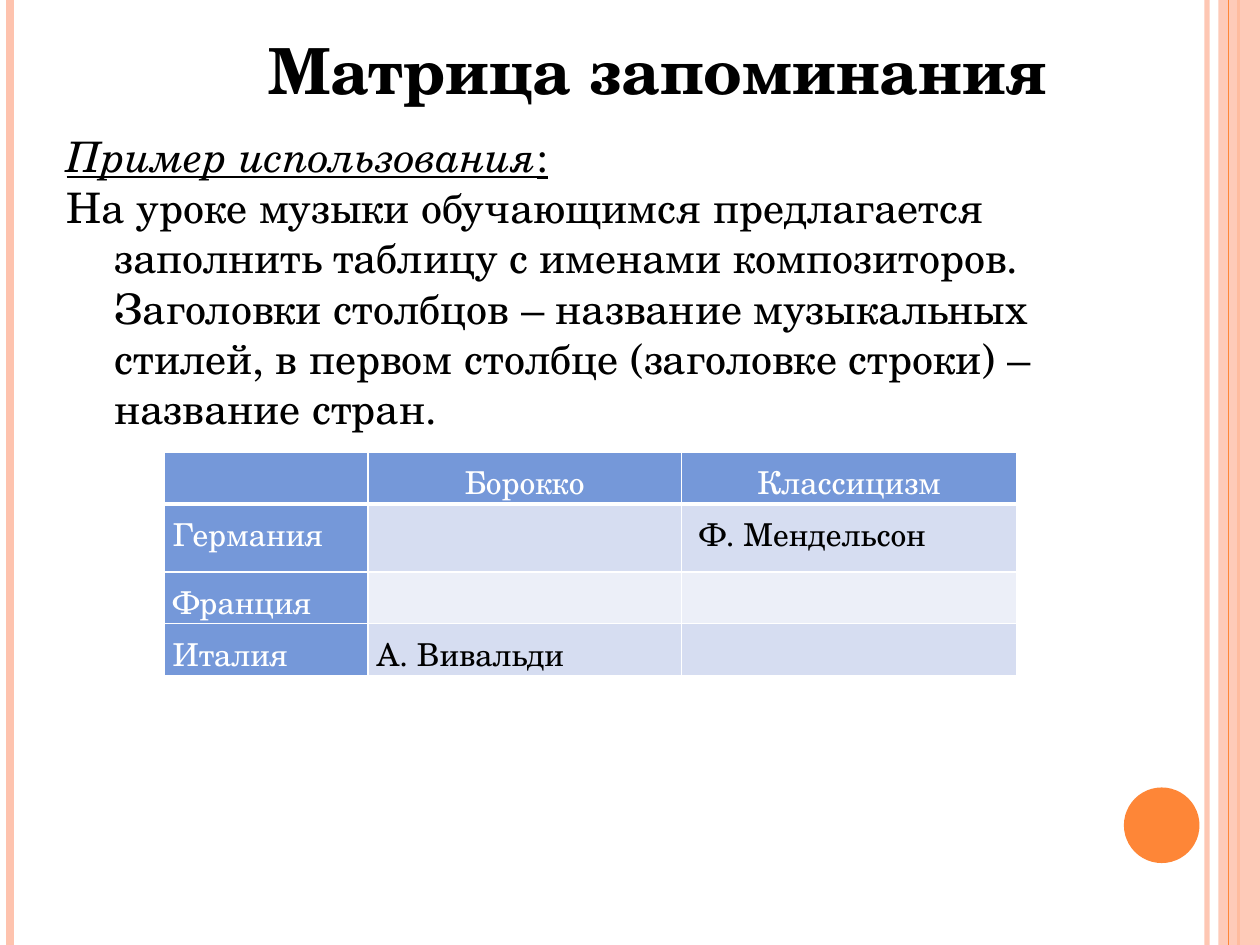
import pptx
import pptx.dml.color
import pptx.enum.shapes
import pptx.enum.text
import pptx.oxml.ns
import pptx.util
from lxml import etree

WIDTH, HEIGHT = 10, 7.5
FONT = "TeX Gyre Schola"
BLACK, WHITE = "000000", "FFFFFF"
PEACH, ORANGE = "FEC3AE", "FE8637"
HEADER_BLUE, BAND_DARK, BAND_LIGHT = "7598D9", "D6DDF1", "ECEFF8"

ALIGN = pptx.enum.text.PP_ALIGN
SHAPE = pptx.enum.shapes.MSO_SHAPE

COLUMN_WIDTHS = [1.62, 2.49, 2.66]
ROW_HEIGHTS = [0.41, 0.54, 0.41, 0.41]
COMPOSERS = [
    ["", "Борокко", "Классицизм"],
    ["Германия", "", " Ф. Мендельсон"],
    ["Франция", "", ""],
    ["Италия", "А. Вивальди", ""],
]


def inches(*values):
    return [pptx.util.Inches(value) for value in values]


def set_color(color_format, color, opacity=100):
    color_format.rgb = pptx.dml.color.RGBColor.from_string(color)
    if opacity < 100:
        element = color_format._xFill.find(".//" + pptx.oxml.ns.qn("a:srgbClr"))
        add_child(element, "a:alpha", val=opacity * 1000)


def set_fill(fill, color, opacity=100):
    fill.solid()
    set_color(fill.fore_color, color, opacity)


def add_child(parent, tag, **attributes):
    child = etree.SubElement(parent, pptx.oxml.ns.qn(tag))
    for name, value in attributes.items():
        child.set(name, str(value))
    return child


def format_run(run, size, color=BLACK, bold=False, italic=False, underline=False):
    font = run.font
    font.name, font.size = FONT, pptx.util.Pt(size)
    font.bold, font.italic, font.underline = bold, italic, underline
    set_color(font.color, color)


def add_vertical_line(slide, x, color, width, opacity=100):
    line = slide.shapes.add_connector(
        pptx.enum.shapes.MSO_CONNECTOR.STRAIGHT, *inches(x, 0, x, HEIGHT))
    line.line.width = pptx.util.Pt(width)
    set_fill(line.line.fill, color, opacity)
    add_child(line._element.spPr, "a:effectLst")


def add_plain_shape(slide, kind, box, color, opacity=100):
    shape = slide.shapes.add_shape(kind, *inches(*box))
    shape.shadow.inherit = False
    set_fill(shape.fill, color, opacity)
    shape.line.fill.background()


def add_text_box(slide, box):
    text_frame = slide.shapes.add_textbox(*inches(*box)).text_frame
    text_frame.word_wrap = True
    return text_frame


def add_frame(slide):
    add_vertical_line(slide, 9.58, PEACH, 3, opacity=93)
    add_vertical_line(slide, 0.08, PEACH, 4.5)
    add_vertical_line(slide, 9.83, ORANGE, 1.5)
    add_plain_shape(slide, SHAPE.RECTANGLE, (9.67, 0, 0.33, HEIGHT), PEACH, opacity=87)
    add_vertical_line(slide, 9.75, ORANGE, 0.75)
    add_plain_shape(slide, SHAPE.OVAL, (8.92, 6.25, 0.6, 0.6), ORANGE)


def add_example(slide):
    text_frame = add_text_box(slide, (0.43, 0.99, 7.95, 2.05))
    heading, description = text_frame.paragraphs[0], text_frame.add_paragraph()
    heading.text = "Пример использования"
    heading.add_run().text = ":"
    description.text = (
        "На уроке музыки обучающимся предлагается заполнить таблицу с именами "
        "композиторов. Заголовки столбцов – название музыкальных стилей, в первом "
        "столбце (заголовке строки) – название стран.")
    format_run(heading.runs[0], 24, italic=True, underline=True)
    format_run(heading.runs[1], 24, underline=True)
    format_run(description.runs[0], 24)
    # Hanging indent
    indent = pptx.util.Inches(0.38)
    for paragraph in text_frame.paragraphs:
        properties = paragraph._p.get_or_add_pPr()
        properties.set("marL", str(indent))
        properties.set("indent", str(-indent))


def set_borders(cell, bottom_width):
    properties = cell._tc.get_or_add_tcPr()
    widths = {"a:lnL": 1, "a:lnR": 1, "a:lnT": 1, "a:lnB": bottom_width}
    for tag, width in widths.items():
        border = add_child(properties, tag, w=pptx.util.Pt(width))
        add_child(add_child(border, "a:solidFill"), "a:srgbClr", val=WHITE)


def fill_cell(cell, text, row, column):
    is_header = row == 0 or column == 0
    set_borders(cell, bottom_width=3 if row == 0 else 1)
    band = BAND_DARK if row % 2 else BAND_LIGHT
    set_fill(cell.fill, HEADER_BLUE if is_header else band)
    cell.margin_left = cell.margin_right = pptx.util.Inches(0.07)
    cell.margin_top = cell.margin_bottom = 0
    paragraph = cell.text_frame.paragraphs[0]
    paragraph.text = text
    paragraph.alignment = ALIGN.CENTER if row == 0 else ALIGN.JUSTIFY
    paragraph.line_spacing = 1.15
    for run in paragraph.runs:
        format_run(run, 18, WHITE if is_header else BLACK)


def add_composer_table(slide):
    table = slide.shapes.add_table(
        len(ROW_HEIGHTS), len(COLUMN_WIDTHS),
        *inches(1.3, 3.59, sum(COLUMN_WIDTHS), sum(ROW_HEIGHTS))).table
    for column, width in zip(table.columns, inches(*COLUMN_WIDTHS)):
        column.width = width
    for row, height in zip(table.rows, inches(*ROW_HEIGHTS)):
        row.height = height
    for row, texts in enumerate(COMPOSERS):
        for column, text in enumerate(texts):
            fill_cell(table.cell(row, column), text, row, column)


def add_title(slide):
    text_frame = add_text_box(slide, (-0.28, 0.29, 11, 0.63))
    text_frame.vertical_anchor = pptx.enum.text.MSO_ANCHOR.MIDDLE
    paragraph = text_frame.paragraphs[0]
    paragraph.text = "Матрица запоминания"
    paragraph.alignment = ALIGN.CENTER
    paragraph.line_spacing = 0.8
    format_run(paragraph.runs[0], 36.3, bold=True)


def main():
    presentation = pptx.Presentation()
    presentation.slide_width, presentation.slide_height = inches(WIDTH, HEIGHT)
    slide = presentation.slides.add_slide(presentation.slide_layouts[6])
    add_frame(slide)
    add_example(slide)
    add_composer_table(slide)
    add_title(slide)
    presentation.save("out.pptx")


if __name__ == "__main__":
    main()
